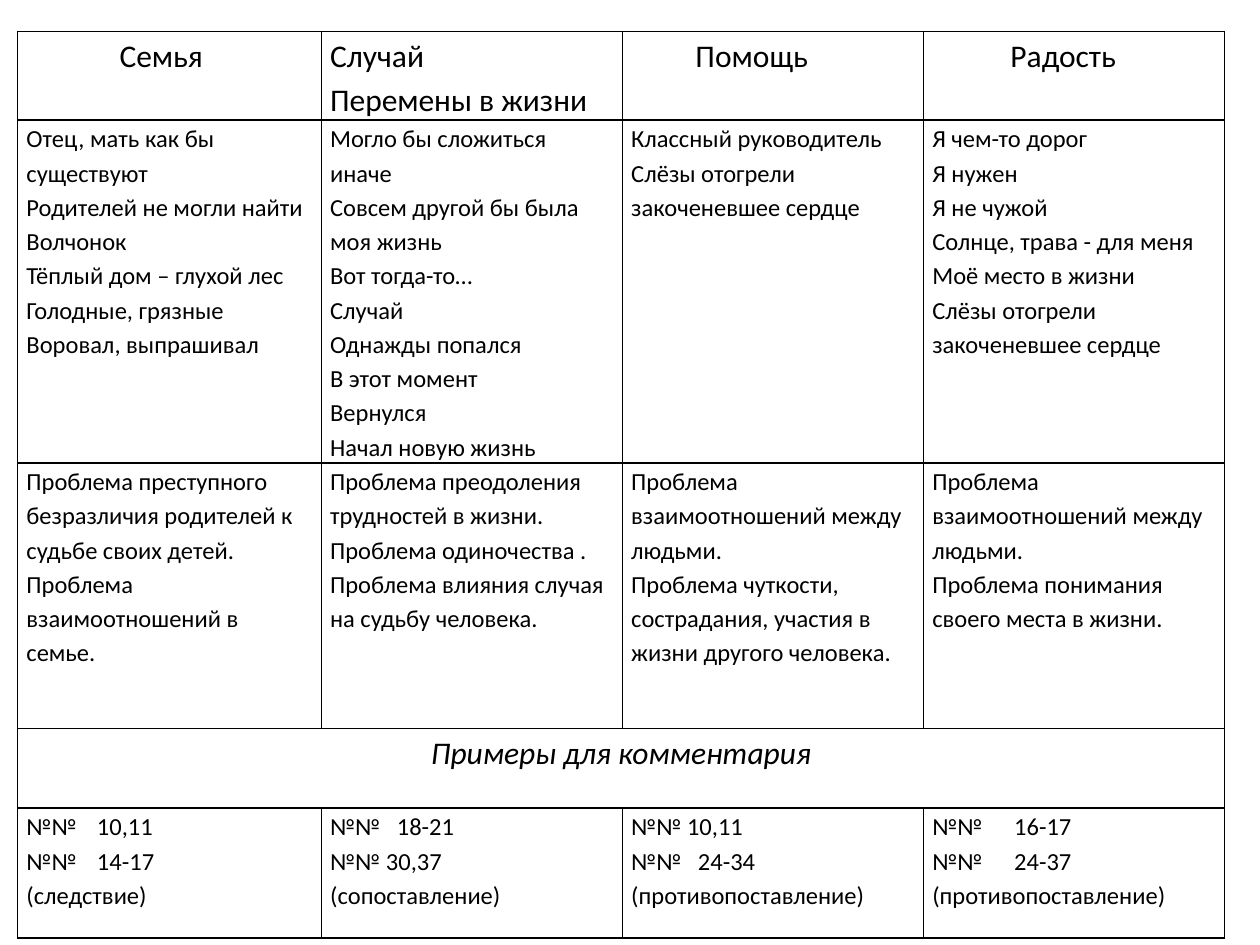
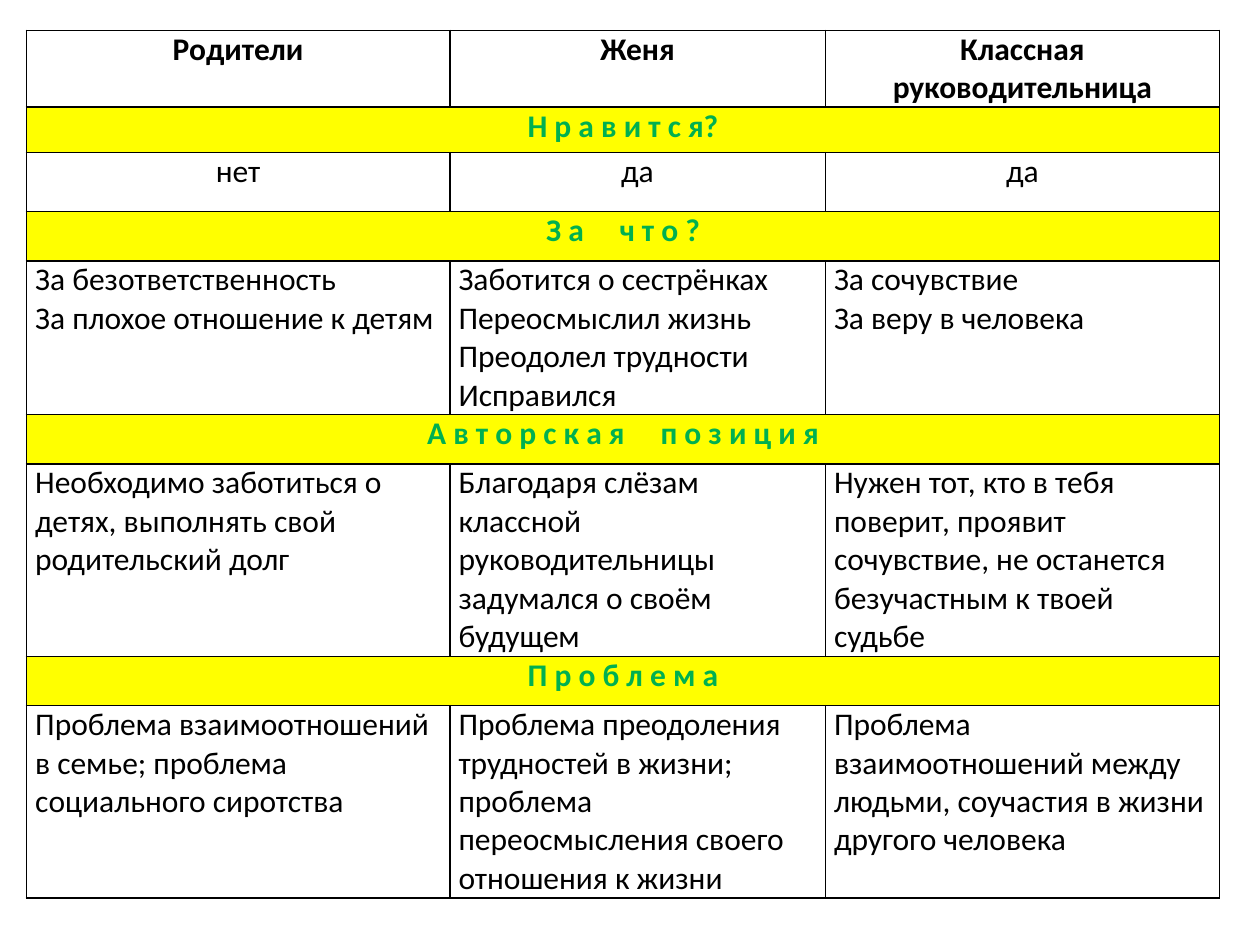
from lxml import etree
from pptx import Presentation
from pptx.dml.color import RGBColor
from pptx.enum.text import PP_ALIGN
from pptx.oxml.ns import qn
from pptx.util import Inches, Pt

LEFT, CENTER = PP_ALIGN.LEFT, PP_ALIGN.CENTER
COLORS = {"text": "000000", "border": "000000", "band": "FFFF00", "band_text": "00B050"}
FONT = "Calibri"
LARGE, SMALL = 18, 14
SIDE_MARGIN = 0.07
WORD_GAP = 16.3

THEMES = ["Семья", "Случай\nПеремены в жизни", "Помощь", "Радость"]
THEME_INDENTS = [0.74, 0, 0.51, 0.62]
QUOTES = [
    "Отец, мать как бы существуют\nРодителей не могли найти\nВолчонок\n"
    "Тёплый дом – глухой лес\nГолодные, грязные\nВоровал, выпрашивал",
    "Могло бы сложиться иначе\nСовсем другой бы была моя жизнь\nВот тогда-то…\n"
    "Случай\nОднажды попался\nВ этот момент\nВернулся\nНачал новую жизнь",
    "Классный руководитель\nСлёзы отогрели закоченевшее сердце",
    "Я чем-то дорог\nЯ нужен\nЯ не чужой\nСолнце, трава - для меня\n"
    "Моё место в жизни\nСлёзы отогрели закоченевшее сердце",
]
PROBLEMS = [
    "Проблема преступного безразличия родителей к судьбе своих детей.\n"
    "Проблема взаимоотношений в семье.",
    "Проблема преодоления трудностей в жизни.\nПроблема одиночества .\n"
    "Проблема влияния случая на судьбу человека.",
    "Проблема взаимоотношений между людьми.\n"
    "Проблема чуткости, сострадания, участия в жизни другого человека.",
    "Проблема взаимоотношений между людьми.\n"
    "Проблема понимания своего места в жизни.",
]
EXAMPLES = [
    "№№\t10,11\n№№\t14-17\n(следствие)",
    "№№\t18-21\n№№ 30,37\n(сопоставление)",
    "№№ 10,11\n№№\t24-34\n(противопоставление)",
    "№№\t16-17\n№№\t24-37\n(противопоставление)",
]
EXAMPLE_TABS = [0.56, 0.53, 0.53, 0.65]

PEOPLE = ["Родители", "Женя", "Классная руководительница"]
QUESTIONS = [
    (["Н р а в и т с я?"], CENTER, ["нет", "да", "да"]),
    (["З а", "ч т о ?"], LEFT, [
        "За безответственность\nЗа плохое отношение к детям",
        "Заботится о сестрёнках\nПереосмыслил жизнь\nПреодолел трудности\nИсправился",
        "За сочувствие\nЗа веру в человека",
    ]),
    (["А в т о р с к а я", "п о з и ц и я"], LEFT, [
        "Необходимо заботиться о\nдетях, выполнять свой\nродительский долг",
        "Благодаря слёзам классной руководительницы задумался о своём\nбудущем",
        "Нужен тот, кто в тебя поверит, проявит сочувствие, не останется\n"
        "безучастным к твоей\nсудьбе",
    ]),
    (["П р о б л е м а"], LEFT, [
        "Проблема взаимоотношений в семье; проблема социального сиротства",
        "Проблема преодоления трудностей в жизни;\n"
        "проблема переосмысления своего отношения к жизни",
        "Проблема взаимоотношений между людьми, соучастия в жизни\nдругого человека",
    ]),
]


def border_cell(cell):
    properties = cell._tc.get_or_add_tcPr()
    for side in ("lnL", "lnR", "lnT", "lnB"):
        line = etree.SubElement(properties, qn(f"a:{side}"), w=str(Pt(1)))
        fill = etree.SubElement(line, qn("a:solidFill"))
        etree.SubElement(fill, qn("a:srgbClr"), val=COLORS["border"])


def add_grid(prs, left, top, widths, heights):
    slide = prs.slides.add_slide(prs.slide_layouts[6])
    frame = slide.shapes.add_table(
        len(heights), len(widths), Inches(left), Inches(top),
        Inches(sum(widths)), Inches(sum(heights)))
    table = frame.table
    table.first_row = table.horz_banding = False
    for column, width in zip(table.columns, widths):
        column.width = Inches(width)
    for row, height in zip(table.rows, heights):
        row.height = Inches(height)
    for cell in table.iter_cells():
        border_cell(cell)
        cell.fill.background()
        cell.margin_left = cell.margin_right = Inches(SIDE_MARGIN)
        cell.margin_top = cell.margin_bottom = 0
    return table


def format_cell(cell, size=LARGE, align=LEFT, spacing=1.0, bold=False,
                italic=False, color="text"):
    for paragraph in cell.text_frame.paragraphs:
        paragraph.alignment = align
        paragraph.line_spacing = spacing
        for run in paragraph.runs:
            font = run.font
            font.name, font.size = FONT, Pt(size)
            font.bold, font.italic = bold, italic
            font.color.rgb = RGBColor.from_string(COLORS[color])


def fill_row(table, row, texts, **style):
    for column, text in enumerate(texts):
        cell = table.cell(row, column)
        cell.text_frame.text = text
        format_cell(cell, **style)


def merge_row(table, row):
    first = table.cell(row, 0)
    first.merge(table.cell(row, len(table.columns) - 1))
    return first


def add_band(table, row, words):
    band = merge_row(table, row)
    band.fill.solid()
    band.fill.fore_color.rgb = RGBColor.from_string(COLORS["band"])
    paragraph = band.text_frame.paragraphs[0]
    for index, word in enumerate(words):
        if index:
            gap = paragraph.add_run()
            gap.text = " "
            gap._r.get_or_add_rPr().set("spc", str(round(WORD_GAP * 100)))
        paragraph.add_run().text = word
    format_cell(band, align=CENTER, bold=True, color="band_text")


def set_tab(cell, position):
    for paragraph in cell.text_frame.paragraphs:
        if "\t" in paragraph.text:
            tabs = etree.SubElement(paragraph._p.get_or_add_pPr(), qn("a:tabLst"))
            etree.SubElement(tabs, qn("a:tab"), pos=str(Inches(position)), algn="l")


def build_themes(prs):
    table = add_grid(prs, 0.14, 0.25, [2.41, 2.39, 2.39, 2.39],
                     [0.7, 2.72, 2.11, 0.63, 1.03])
    fill_row(table, 0, THEMES, spacing=1.15)
    for row, texts in ((1, QUOTES), (2, PROBLEMS), (4, EXAMPLES)):
        fill_row(table, row, texts, size=SMALL, spacing=1.15)
    for column, (indent, tab) in enumerate(zip(THEME_INDENTS, EXAMPLE_TABS)):
        table.cell(0, column).margin_left = Inches(SIDE_MARGIN + indent)
        set_tab(table.cell(4, column), tab)
    examples_title = merge_row(table, 3)
    examples_title.margin_top = examples_title.margin_bottom = Inches(0.05)
    examples_title.text_frame.text = "Примеры для комментария"
    format_cell(examples_title, align=CENTER, italic=True)


def build_attitudes(prs):
    table = add_grid(prs, 0.21, 0.24, [3.36, 2.98, 3.13],
                     [0.61, 0.36, 0.47, 0.39, 1.22, 0.39, 1.53, 0.39, 1.52])
    fill_row(table, 0, PEOPLE, align=CENTER, bold=True)
    for index, (question, align, answers) in enumerate(QUESTIONS):
        add_band(table, 2 * index + 1, question)
        fill_row(table, 2 * index + 2, answers, align=align)


def main():
    prs = Presentation()
    prs.slide_width, prs.slide_height = Inches(10), Inches(7.5)
    build_themes(prs)
    build_attitudes(prs)
    prs.save("out.pptx")


if __name__ == "__main__":
    main()
